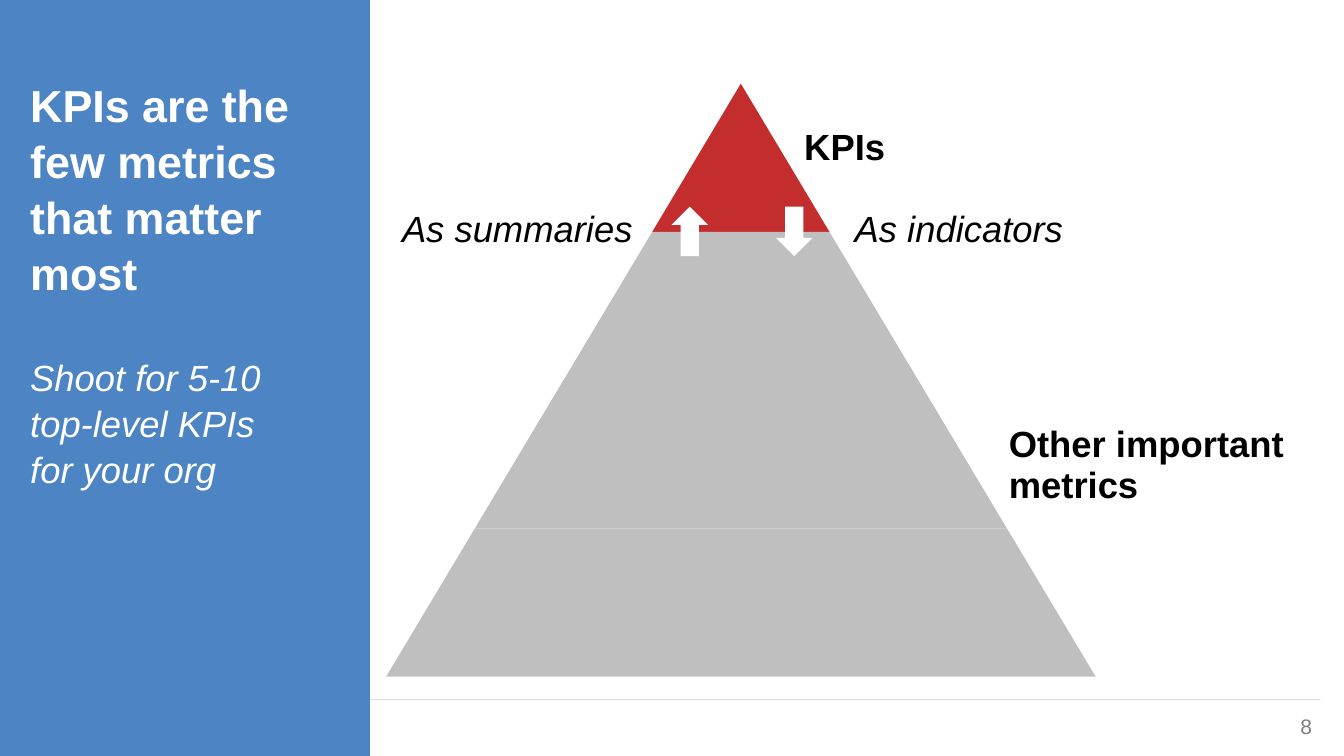
from lxml import etree
from pptx import Presentation
from pptx.dml.color import RGBColor
from pptx.enum.shapes import MSO_CONNECTOR as Connector, MSO_SHAPE as Shape
from pptx.enum.text import MSO_ANCHOR as Anchor, PP_ALIGN as Align
from pptx.oxml.ns import qn
from pptx.util import Pt

BLUE = RGBColor(0x4D, 0x84, 0xC4)
RED = RGBColor(0xC3, 0x2D, 0x2E)
SILVER = RGBColor(0xBF, 0xBF, 0xBF)
GRAY = RGBColor(0x7F, 0x7F, 0x7F)
BLACK = RGBColor(0, 0, 0)
WHITE = RGBColor(0xFF, 0xFF, 0xFF)


class SlideBuilder:
    font = "Arial"
    label_size = 26

    def __init__(self, page):
        self.page = page

    def shape(self, kind, left, top, width, height, fill):
        shape = self.page.shapes.add_shape(kind, Pt(left), Pt(top), Pt(width), Pt(height))
        shape.shadow.inherit = False
        shape.fill.solid()
        shape.fill.fore_color.rgb = fill
        shape.line.fill.background()
        return shape

    def rule(self, left, right, top):
        line = self.page.shapes.add_connector(
            Connector.STRAIGHT, Pt(left), Pt(top), Pt(right), Pt(top))
        line.line.width = Pt(0.75)
        line.line.color.rgb = SILVER
        color = line._element.spPr.find(".//" + qn("a:srgbClr"))
        etree.SubElement(color, qn("a:alpha")).set("val", "50000")
        etree.SubElement(line._element.spPr, qn("a:effectLst"))

    def frame(self, shape, left, top, right, bottom):
        frame = shape.text_frame
        frame.word_wrap = True
        frame.vertical_anchor = Anchor.TOP
        frame.margin_left, frame.margin_top = Pt(left), Pt(top)
        frame.margin_right, frame.margin_bottom = Pt(right), Pt(bottom)
        return frame

    def set_text(self, para, text, size, color, bold=False, italic=False,
                 align=Align.LEFT, spacing=1.0):
        para.text = text
        para.alignment = align
        para.line_spacing = spacing
        for span in para.runs:
            span.font.name = self.font
            span.font.size = Pt(size)
            span.font.color.rgb = color
            span.font.bold = bold
            span.font.italic = italic

    def textbox(self, left, top, width, height):
        return self.page.shapes.add_textbox(Pt(left), Pt(top), Pt(width), Pt(height))

    def label(self, text, left, top, width, height, bold=False):
        box = self.textbox(left, top, width, height)
        para = self.frame(box, 7.2, 3.6, 7.2, 0).paragraphs[0]
        self.set_text(para, text, self.label_size, BLACK, bold, not bold, spacing=0.94)

    def page_number(self, text, left, top, width, height):
        box = self.textbox(left, top, width, height)
        para = self.frame(box, 0, 3.6, 0, 3.6).paragraphs[0]
        self.set_text(para, text, 15, GRAY, align=Align.CENTER)

    def sidebar(self, width, height, title, note):
        panel = self.shape(Shape.RECTANGLE, 0, 0, width, height, BLUE)
        frame = self.frame(panel, 21.6, 54, 14.4, 3.6)
        self.set_text(frame.paragraphs[0], title, 32, WHITE, bold=True, spacing=1.04)
        para = frame.add_paragraph()
        self.set_text(para, note, self.label_size, WHITE, italic=True, spacing=1.05)
        para.space_before = Pt(38.4)

    def pyramid(self, center, top, tip_width, tier_height, fills):
        for tier, fill in enumerate(fills):
            width = tip_width * (tier + 1)
            block = self.shape(Shape.TRAPEZOID, center - width / 2,
                               top + tier * tier_height, width, tier_height, fill)
            block.adjustments[0] = tip_width / 2 / tier_height

    def arrow(self, left, rotation):
        arrow = self.shape(Shape.DOWN_ARROW, left, 147.6, 25.9, 35.3, WHITE)
        arrow.rotation = rotation


def main():
    deck = Presentation()
    deck.slide_width, deck.slide_height = Pt(960), Pt(540)
    slide = SlideBuilder(deck.slides.add_slide(deck.slide_layouts[6]))

    slide.page_number("8", 904.3, 506.2, 57.6, 28.8)
    slide.rule(17.3, 943.2, 499.7)
    slide.sidebar(264.2, 540, "KPIs are the few metrics that matter most",
                  "Shoot for 5-10\vtop-level KPIs\vfor your org")
    slide.pyramid(529.2, 59.8, 126.7, 105.9, [RED, SILVER, SILVER, SILVER])
    slide.label("KPIs", 567.4, 87.8, 393.1, 44.6, bold=True)
    slide.label("Other important metrics", 713.5, 299.5, 282.2, 75.6, bold=True)
    slide.label("As indicators", 603.4, 146.2, 286.6, 75.6)
    slide.label("As summaries", 280.1, 146.2, 194.4, 75.6)
    slide.arrow(479.7, 180)
    slide.arrow(554.4, 0)
    deck.save("out.pptx")


if __name__ == "__main__":
    main()
